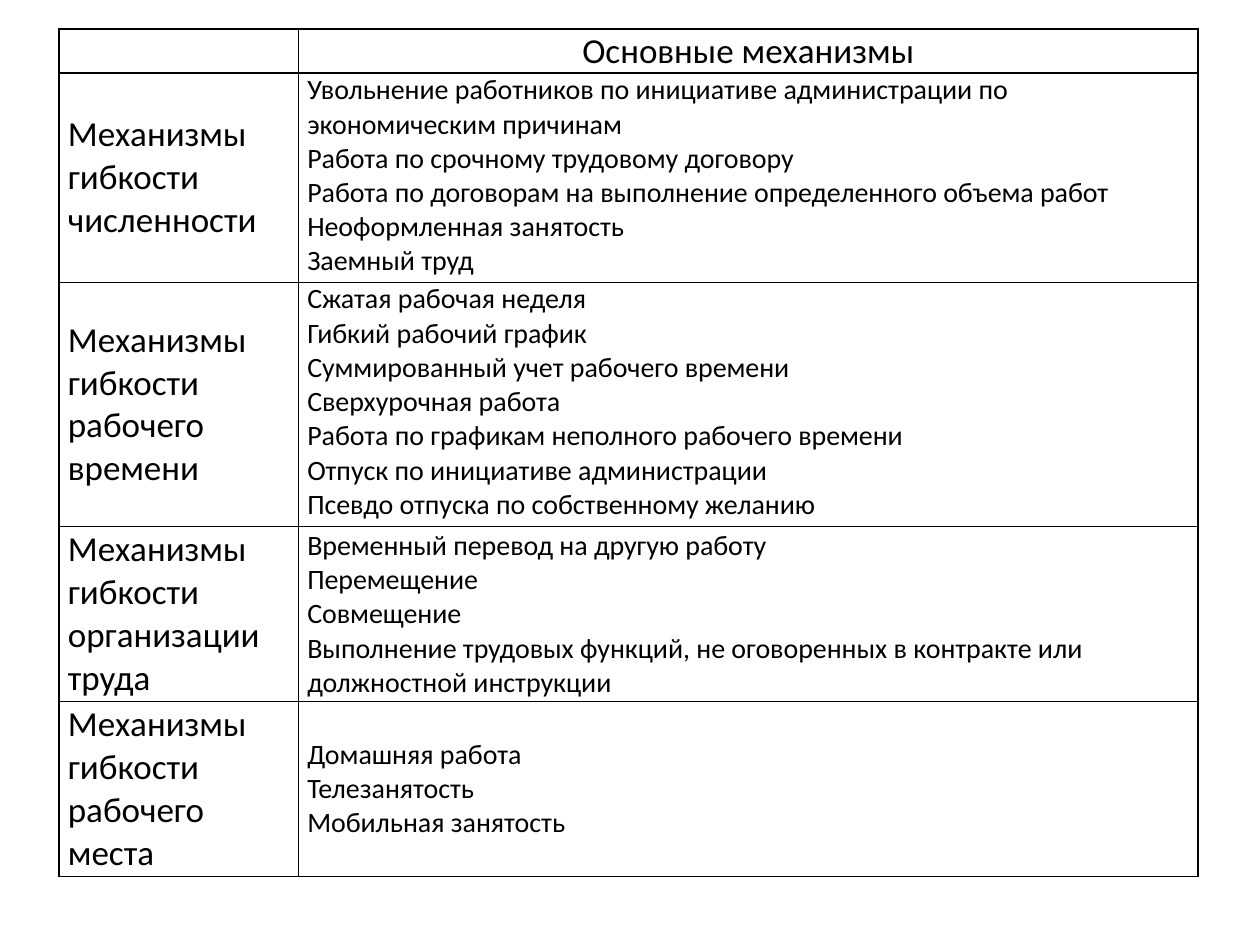
from lxml import etree
from pptx import Presentation
from pptx.dml.color import RGBColor
from pptx.enum import text
from pptx.oxml import ns
from pptx.util import Pt

BLACK = RGBColor(0, 0, 0)
WHITE = RGBColor(255, 255, 255)
FONT = "Calibri"
COLUMN_WIDTHS = (136.8, 514.1)
ROW_HEIGHTS = (25.2, 119.5, 139.7, 100, 100)
HEADER = "Основные механизмы"
TOP, MIDDLE = text.MSO_ANCHOR.TOP, text.MSO_ANCHOR.MIDDLE
LEFT, CENTER, JUSTIFY = text.PP_ALIGN.LEFT, text.PP_ALIGN.CENTER, text.PP_ALIGN.JUSTIFY

MECHANISMS = [
    ("Механизмы гибкости численности", TOP, [
        "Увольнение работников по инициативе администрации по экономическим причинам",
        "Работа по срочному трудовому договору",
        "Работа по договорам на выполнение определенного объема работ",
        "Неоформленная занятость",
        "Заемный труд",
    ]),
    ("Механизмы гибкости рабочего времени", TOP, [
        "Сжатая рабочая неделя",
        "Гибкий рабочий график",
        "Суммированный учет рабочего времени",
        "Сверхурочная работа",
        "Работа по графикам неполного рабочего времени",
        "Отпуск по инициативе администрации",
        "Псевдо отпуска по собственному желанию",
    ]),
    ("Механизмы гибкости организации труда", MIDDLE, [
        "Временный перевод на другую работу",
        "Перемещение",
        "Совмещение",
        "Выполнение трудовых функций, не оговоренных в контракте или должностной инструкции",
    ]),
    ("Механизмы гибкости рабочего места", MIDDLE, [
        "Домашняя работа",
        "Телезанятость",
        "Мобильная занятость",
    ]),
]
JUSTIFIED = MECHANISMS[2][2][:3]


def add_borders(cell):
    tc_pr = cell._tc.get_or_add_tcPr()
    for i, side in enumerate(("a:lnL", "a:lnR", "a:lnT", "a:lnB")):
        ln = etree.Element(ns.qn(side), w=str(Pt(1)))
        fill = etree.SubElement(ln, ns.qn("a:solidFill"))
        etree.SubElement(fill, ns.qn("a:srgbClr"), val=str(BLACK))
        tc_pr.insert(i, ln)


def format_cell(cell):
    cell.margin_left = cell.margin_right = Pt(5)
    cell.margin_top = cell.margin_bottom = Pt(0)
    cell.fill.solid()
    cell.fill.fore_color.rgb = WHITE
    add_borders(cell)


def write_cell(cell, lines, size, anchor=MIDDLE, align=LEFT):
    cell.vertical_anchor = anchor
    tf = cell.text_frame
    for i, line in enumerate(lines):
        p = tf.add_paragraph() if i else tf.paragraphs[0]
        p.text = line
        p.alignment = JUSTIFY if line in JUSTIFIED else align
        p.font.name = FONT
        p.font.size = Pt(size)
        p.font.bold = False
        p.font.color.rgb = BLACK


def add_grid(s):
    frame = s.shapes.add_table(len(ROW_HEIGHTS), len(COLUMN_WIDTHS), Pt(33.8), Pt(16.6),
                               Pt(sum(COLUMN_WIDTHS)), Pt(sum(ROW_HEIGHTS)))
    table = frame.table
    table.first_row = table.horz_banding = False
    for column, width in zip(table.columns, COLUMN_WIDTHS):
        column.width = Pt(width)
    for row, height in zip(table.rows, ROW_HEIGHTS):
        row.height = Pt(height)
    for cell in table.iter_cells():
        format_cell(cell)
    return table


def main():
    prs = Presentation()
    prs.slide_width, prs.slide_height = Pt(720), Pt(540)
    s = prs.slides.add_slide(prs.slide_layouts[6])
    table = add_grid(s)
    write_cell(table.cell(0, 1), [HEADER], 20, align=CENTER)
    for row, (name, anchor, items) in enumerate(MECHANISMS, 1):
        write_cell(table.cell(row, 0), [name], 20)
        write_cell(table.cell(row, 1), items, 16, anchor)
    prs.save("out.pptx")


if __name__ == "__main__":
    main()
